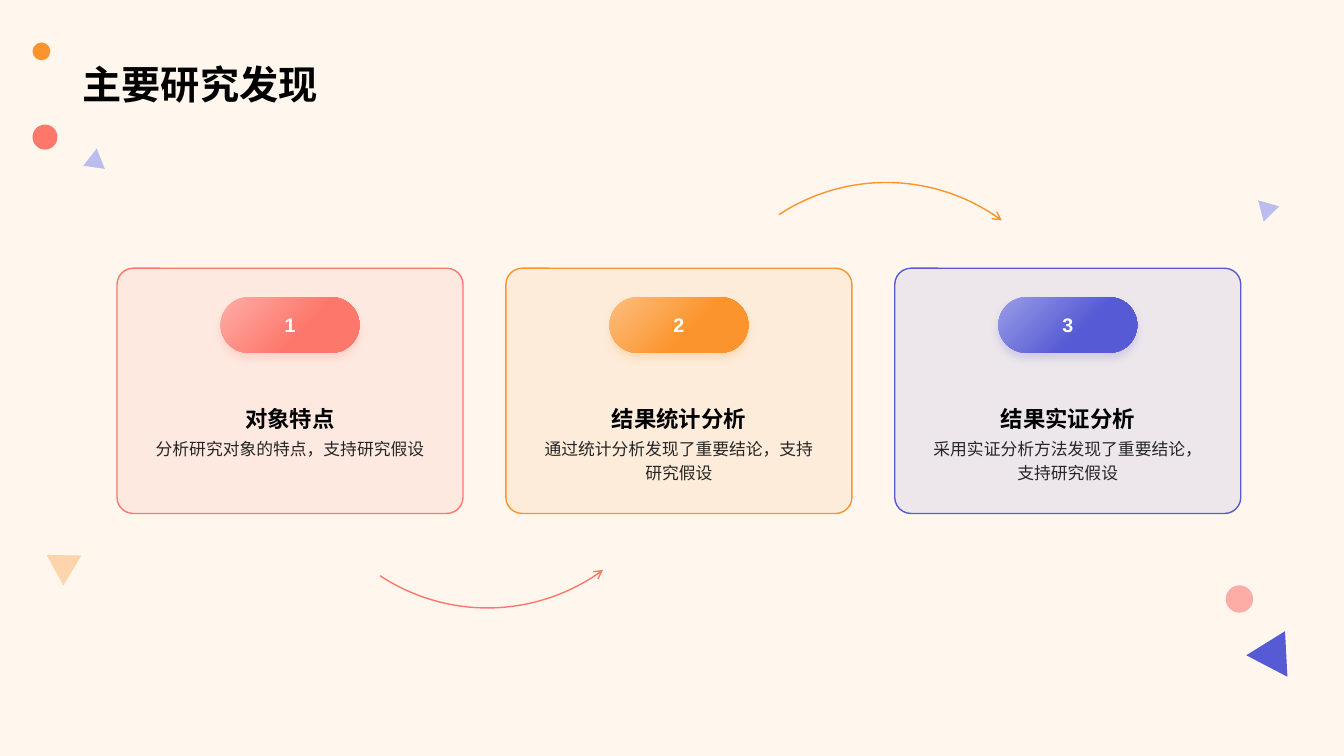
"""Build the slide of main research findings: three numbered cards joined by arcs."""
from lxml import etree
from pptx import Presentation
from pptx.dml.color import RGBColor
from pptx.enum.lang import MSO_LANGUAGE_ID
from pptx.enum.shapes import MSO_SHAPE
from pptx.enum.text import MSO_ANCHOR, PP_ALIGN
from pptx.oxml import parse_xml
from pptx.oxml.ns import nsdecls, qn
from pptx.util import Cm, Pt

HEADING = "主要研究发现"
FINDINGS = [
    ("对象特点", "分析研究对象的特点，支持研究假设", "coral"),
    ("结果统计分析", "通过统计分析发现了重要结论，支持研究假设", "orange"),
    ("结果实证分析", "采用实证分析方法发现了重要结论，支持研究假设", "indigo"),
]
COLORS = {
    "cream": "FFF7EE", "black": "000000", "gray": "262626", "white": "FFFFFF",
    "coral": "FD776B", "coral light": "FEADA6",
    "orange": "FB942C", "orange light": "FDBF80", "orange pale": "FDD4AB",
    "indigo": "565BD5", "indigo light": "9A9DE6", "indigo pale": "BBBDEE",
}
DOT, WEDGE = MSO_SHAPE.OVAL, MSO_SHAPE.ISOSCELES_TRIANGLE
DECORATIONS = [
    (DOT, 0.82, 3.14, 0.63, 0.63, 0, "coral"),
    (WEDGE, 31.57, 15.85, 1.17, 0.99, 27.6, "indigo"),
    (DOT, 0.82, 1.07, 0.45, 0.45, 0, "orange"),
    (DOT, 30.89, 14.75, 0.69, 0.69, 0, "coral light"),
    (WEDGE, 31.6, 4.98, 0.55, 0.48, 315.6, "indigo pale"),
    (WEDGE, 2.13, 3.74, 0.55, 0.48, 8.2, "indigo pale"),
    (WEDGE, 1.06, 13.8, 0.88, 0.76, 301.1, "orange pale"),
]
ARCS = [(7.37, 5.49, False, "coral"), (17.42, 4.6, True, "orange")]
ARC_SIZE = 9.83
ARC_ANGLES = (32.2, 74.03)

CARD_LEFT, CARD_TOP, CARD_WIDTH, CARD_HEIGHT = 2.95, 6.76, 8.72, 6.18
CARD_PITCH = 9.8
BADGE_TOP, BADGE_WIDTH, BADGE_HEIGHT = 7.49, 3.5, 1.4
TEXT_WIDTH = 7.39
NAME_TOP, NAME_HEIGHT = 9.9, 1.1
DETAIL_TOP, DETAIL_HEIGHT = 10.82, 1.42


def rgb(color):
    return RGBColor.from_string(COLORS[color])


def add_figure(slide, kind, left, top, width, height, fill=None, line=None):
    figure = slide.shapes.add_shape(kind, Cm(left), Cm(top), Cm(width), Cm(height))
    figure.shadow.inherit = False
    if fill:
        figure.fill.solid()
        figure.fill.fore_color.rgb = rgb(fill)
    else:
        figure.fill.background()
    if line:
        figure.line.color.rgb = rgb(line)
        figure.line.width = Pt(1)
    else:
        figure.line.fill.background()
    return figure


def write(frame, words, size, color, bold, align, anchor):
    frame.vertical_anchor = anchor
    paragraph = frame.paragraphs[0]
    paragraph.alignment = align
    run = paragraph.add_run()
    run.text = words
    run.font.name = "Arial"
    run.font.size = Pt(size)
    run.font.bold = bold
    run.font.color.rgb = rgb(color)
    run.font.language_id = MSO_LANGUAGE_ID.SIMPLIFIED_CHINESE
    return paragraph


def add_caption(slide, left, top, height, words, size, color, bold, anchor):
    caption = slide.shapes.add_textbox(Cm(left), Cm(top), Cm(TEXT_WIDTH), Cm(height))
    caption.text_frame.word_wrap = True
    return write(caption.text_frame, words, size, color, bold, PP_ALIGN.CENTER, anchor)


def add_arc(slide, left, top, flipped, color):
    arc = add_figure(slide, MSO_SHAPE.ARC, left, top, ARC_SIZE, ARC_SIZE, line=color)
    for index, angle in enumerate(ARC_ANGLES):
        arc.adjustments[index] = angle
    if flipped:
        arc.element.spPr.get_or_add_xfrm().set("flipV", "1")
    outline = arc.element.spPr.find(qn("a:ln"))
    etree.SubElement(outline, qn("a:headEnd"), type="arrow")


def add_badge(slide, left, number, color):
    badge = add_figure(slide, MSO_SHAPE.ROUNDED_RECTANGLE, left, BADGE_TOP,
                       BADGE_WIDTH, BADGE_HEIGHT)
    badge.adjustments[0] = 0.5
    badge.fill.gradient()
    badge.fill.gradient_angle = 315
    stops = badge.fill.gradient_stops
    for stop, position, shade in zip(stops, (0, 0.6), (f"{color} light", color)):
        stop.position = position
        stop.color.rgb = rgb(shade)
    badge.element.spPr.find(qn("a:effectLst")).append(parse_xml(
        f'<a:outerShdw {nsdecls("a")} blurRad="{Pt(6)}" dist="{Pt(4)}" dir="5400000" '
        f'algn="t" rotWithShape="0"><a:srgbClr val="{COLORS[color]}">'
        '<a:alpha val="20000"/></a:srgbClr></a:outerShdw>'))
    badge.text_frame.word_wrap = False
    write(badge.text_frame, str(number), 14, "white", True,
          PP_ALIGN.CENTER, MSO_ANCHOR.MIDDLE)


def add_card(slide, index, name, detail, color):
    left = CARD_LEFT + index * CARD_PITCH
    text_left = left + (CARD_WIDTH - TEXT_WIDTH) / 2
    card = add_figure(slide, MSO_SHAPE.ROUNDED_RECTANGLE, left, CARD_TOP,
                      CARD_WIDTH, CARD_HEIGHT, color, color)
    card.adjustments[0] = 0.066
    tint = card.element.spPr.find(qn("a:solidFill"))[0]
    etree.SubElement(tint, qn("a:alpha"), val="10000")
    add_caption(slide, text_left, NAME_TOP, NAME_HEIGHT, name,
                16, "black", True, MSO_ANCHOR.BOTTOM)
    add_badge(slide, left + (CARD_WIDTH - BADGE_WIDTH) / 2, index + 1, color)
    summary = add_caption(slide, text_left, DETAIL_TOP, DETAIL_HEIGHT, detail,
                          12, "gray", False, MSO_ANCHOR.TOP)
    summary.line_spacing = 1.2


def main():
    deck = Presentation()
    deck.slide_width, deck.slide_height = Cm(33.87), Cm(19.05)
    slide = deck.slides.add_slide(deck.slide_layouts[5])
    slide.background.fill.solid()
    slide.background.fill.fore_color.rgb = rgb("cream")

    for kind, left, top, width, height, turn, color in DECORATIONS:
        add_figure(slide, kind, left, top, width, height, color).rotation = turn
    for arc in ARCS:
        add_arc(slide, *arc)
    for index, finding in enumerate(FINDINGS):
        add_card(slide, index, *finding)

    heading = slide.shapes.title
    heading.left, heading.top = Cm(1.83), Cm(0)
    heading.width, heading.height = Cm(30.18), Cm(2.84)
    write(heading.text_frame, HEADING, 28, "black", True,
          PP_ALIGN.LEFT, MSO_ANCHOR.BOTTOM)
    deck.save("out.pptx")


if __name__ == "__main__":
    main()
